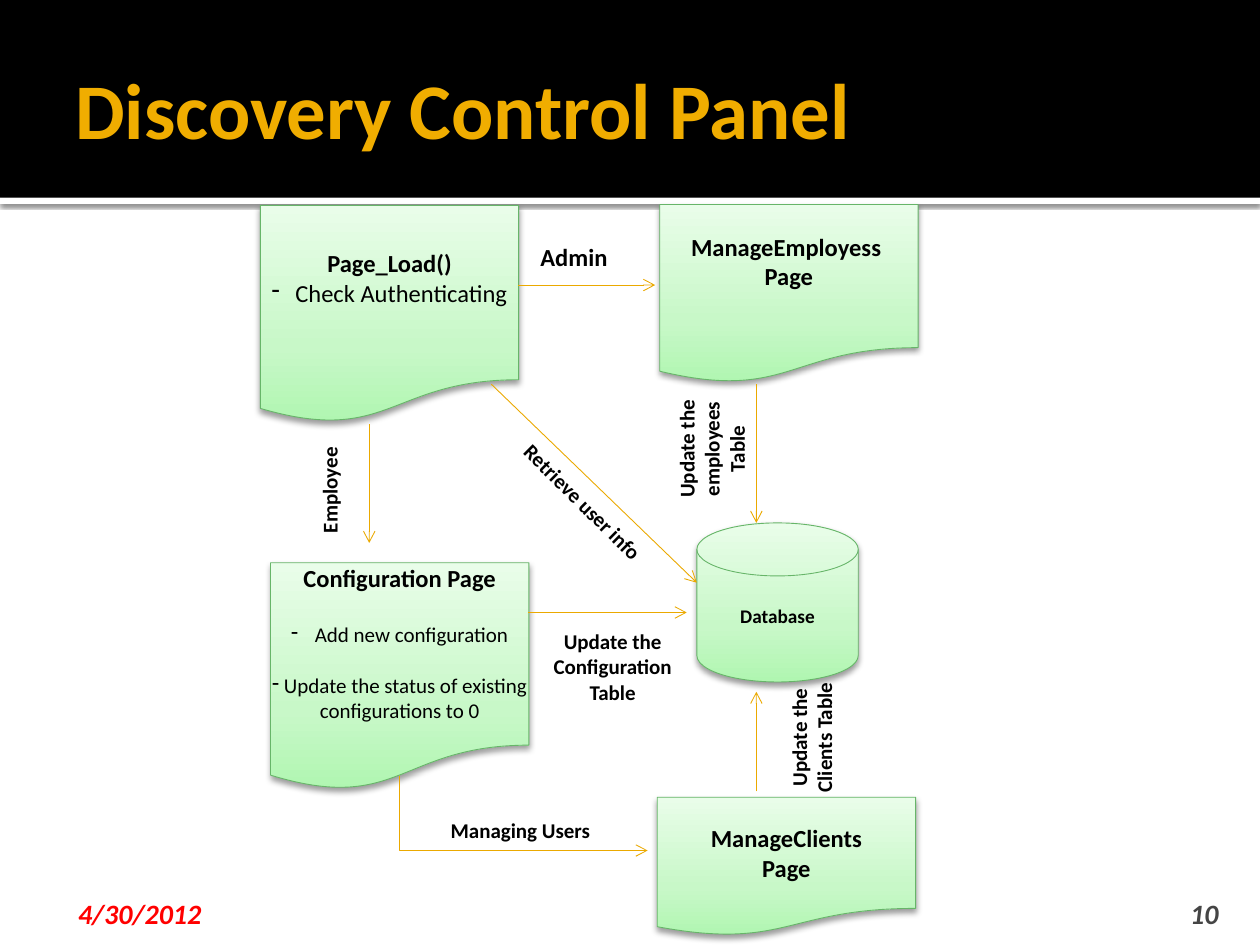
from copy import deepcopy
from dataclasses import dataclass

from lxml import etree
from pptx import Presentation
from pptx import util as u
from pptx.dml.color import RGBColor
from pptx.enum import shapes, text
from pptx.oxml import ns

KIND = shapes.MSO_SHAPE
CENTER, RIGHT = text.PP_ALIGN.CENTER, text.PP_ALIGN.RIGHT
MIDDLE, BOTTOM = text.MSO_ANCHOR.MIDDLE, text.MSO_ANCHOR.BOTTOM
TIGHT = (0, 0, 0, 0)
NORMAL = (7.2, 3.6, 7.2, 3.6)


@dataclass(frozen=True)
class Theme:
    font: str = "Calibri"
    black: str = "000000"
    white: str = "FFFFFF"
    title: str = "F0AD00"
    date: str = "FF0000"
    number: str = "454545"
    arrow: str = "EBA900"
    edge: str = "67B569"
    greens: tuple = ((0, "B0F6B1"), (0.35, "C8F8C8"), (1, "E9FDE9"))
    title_size: float = 45
    footer_size: float = 16
    heading_size: float = 14
    label_size: float = 12
    small_size: float = 11
    hairline: float = 0.5


THEME = Theme()


def rgb(value):
    return RGBColor.from_string(value)


def child(parent, tag, **values):
    return etree.SubElement(parent, ns.qn(tag), {k: str(v) for k, v in values.items()})


def add_shadow(shape, alpha, blur, distance):
    """Cast a black shadow straight down."""
    shape.shadow.inherit = False
    effects = shape._element.spPr.find(ns.qn("a:effectLst"))
    outer = child(effects, "a:outerShdw", blurRad=u.Pt(blur), dist=u.Pt(distance),
                  dir=5400000, algn="ctr", rotWithShape=0)
    color = child(outer, "a:srgbClr", val=THEME.black)
    child(color, "a:alpha", val=alpha * 1000)


def set_frame(shape, insets=NORMAL, anchor=None, wrap=True):
    frame = shape.text_frame
    frame.word_wrap = wrap
    frame.vertical_anchor = anchor
    for side, inset in zip(("left", "top", "right", "bottom"), insets):
        setattr(frame, f"margin_{side}", u.Pt(inset))
    return frame


def add_dash(para, hang):
    """Give the paragraph a dash bullet with a hanging indent."""
    props = para._p.get_or_add_pPr()
    props.set("marL", str(u.Pt(hang)))
    props.set("indent", str(-u.Pt(hang)))
    child(props, "a:buFontTx")
    child(props, "a:buChar", char="-")


def write(frame, lines, align=CENTER):
    """Write (wording, format) pairs, one paragraph each."""
    for index, (wording, changes) in enumerate(lines):
        values = {"size": THEME.heading_size, "bold": True, "italic": False,
                  "color": THEME.black, "gap": 0, "hang": None} | changes
        para = frame.paragraphs[0] if index == 0 else frame.add_paragraph()
        para.alignment = align
        para.space_before = u.Pt(values["gap"])
        if values["hang"] is not None:
            add_dash(para, values["hang"])
        span = para.add_run()
        span.text = wording
        span.font.color.rgb = rgb(values["color"])
        for name, value in {"name": THEME.font, "size": u.Pt(values["size"]),
                            "bold": values["bold"], "italic": values["italic"]}.items():
            setattr(span.font, name, value)


def add_text(page, place, wording, align=CENTER, turn=0, insets=NORMAL, anchor=None,
             wrap=True, **changes):
    box = page.shapes.add_textbox(*map(u.Pt, place))
    box.rotation = turn
    write(set_frame(box, insets, anchor, wrap), [(wording, changes)], align)


def add_band(page, place, color):
    band = page.shapes.add_shape(KIND.RECTANGLE, *map(u.Pt, place))
    band.shadow.inherit = False
    band.fill.solid()
    band.fill.fore_color.rgb = rgb(color)
    band.line.fill.background()
    return band


def add_node(page, kind, place, lines, insets=TIGHT, anchor=MIDDLE):
    node = page.shapes.add_shape(kind, *map(u.Pt, place))
    node.fill.gradient()
    node.fill.gradient_angle = 90
    stop_list = node._element.spPr.find(".//" + ns.qn("a:gsLst"))
    stop_list.append(deepcopy(stop_list[-1]))
    for stop, (position, color) in zip(node.fill.gradient_stops, THEME.greens):
        stop.position = position
        stop.color.rgb = rgb(color)
    node.line.color.rgb = rgb(THEME.edge)
    node.line.width = u.Pt(THEME.hairline)
    add_shadow(node, 38, 3.5, 2)
    write(set_frame(node, insets, anchor), lines)


def add_arrow(page, start, end, kind=shapes.MSO_CONNECTOR.STRAIGHT):
    arrow = page.shapes.add_connector(kind, *map(u.Pt, start + end))
    arrow.line.color.rgb = rgb(THEME.arrow)
    arrow.line.width = u.Pt(THEME.hairline)
    child(arrow.line._ln, "a:tailEnd", type="arrow")
    child(arrow._element.spPr, "a:effectLst")
    return arrow


def add_corner_arrow(page, start, end):
    """Go down from start, then right to end: a flipped elbow turned by 270 degrees."""
    middle_x, middle_y = ((a + b) / 2 for a, b in zip(start, end))
    half_x, half_y = ((b - a) / 2 for a, b in zip(start, end))
    arrow = add_arrow(page, (middle_x + half_y, middle_y - half_x),
                      (middle_x - half_y, middle_y + half_x), shapes.MSO_CONNECTOR.ELBOW)
    props = arrow._element.spPr
    props.find(ns.qn("a:xfrm")).set("rot", str(270 * 60000))
    props.find(ns.qn("a:prstGeom")).set("prst", "bentConnector2")


def add_header_and_footer(page):
    add_shadow(add_band(page, (0, 113, 720, 3.6), THEME.white), 60, 2.5, 0.8)
    add_band(page, (0, 0, 720, 113), THEME.black)
    add_text(page, (36, 12.2, 648, 98.6), "Discovery Control Panel", None, anchor=MIDDLE,
             insets=(7.2, 3.6, 3.6, 3.6), size=THEME.title_size, color=THEME.title)
    footer = {"anchor": BOTTOM, "size": THEME.footer_size, "italic": True}
    add_text(page, (36, 509.8, 168, 21.6), "4/30/2012", None,
             insets=(8.6, 3.6, 3.6, 0), color=THEME.date, **footer)
    add_text(page, (645.8, 509.8, 57.6, 21.6), "10", RIGHT,
             insets=(7.2, 3.6, 7.2, 0), color=THEME.number, **footer)


def add_nodes(page):
    document, width = KIND.FLOWCHART_DOCUMENT, 147.6
    raised = (0, 0, 0, 17)
    detail = {"size": THEME.label_size, "bold": False}
    add_node(page, KIND.FLOWCHART_MAGNETIC_DISK, (398.2, 298.8, 92.2, 90.9),
             [("Database", {"size": THEME.small_size})], NORMAL)
    add_node(page, document, (148.8, 117.4, width, 124.2),
             [("Page_Load()", {}), ("Check Authenticating", {"bold": False, "hang": 13.5})],
             raised)
    add_node(page, document, (377, 116.9, width, 102),
             [("ManageEmployess ", {}), ("Page", {})], raised)
    add_node(page, document, (375.6, 455.6, width, 79.2),
             [("ManageClients", {}), ("Page", {})], NORMAL)
    add_node(page, document, (154.6, 321.6, width, 130),
             [("Configuration Page", {}),
              ("Add new configuration", detail | {"gap": 17, "hang": 13.5}),
              (" Update the status of existing configurations to 0",
               detail | {"gap": 14.6, "hang": 0})], anchor=None)


def add_links(page):
    for start, end in (((296, 162.9), (374.4, 162.9)), ((280.8, 219.6), (398.2, 333)),
                       ((432.2, 219.6), (432.2, 298.8)), ((211, 242.4), (211, 310.3)),
                       ((302, 350), (392.4, 350)), ((432.2, 452.2), (432.2, 395.3))):
        add_arrow(page, start, end)
    add_corner_arrow(page, (228.2, 443.5), (370.1, 486))

    add_text(page, (301.7, 134.8, 79.2, 24.2), "Admin", None)
    for place, wording, turn, wrap in (
            ((358.6, 231, 96.5, 51), "Update the employees Table", 270, True),
            ((154.8, 269.2, 67, 21.8), "Employee", 270, False),
            ((247, 275, 170, 21.8), " Retrieve user info", 44.6, True),
            ((301.9, 355.7, 96.5, 51), "Update the Configuration Table", 0, True),
            ((248.4, 463.8, 98, 21.8), "Managing Users", 0, False),
            ((415.6, 403.2, 96.5, 36.4), "Update the Clients Table", 270, True)):
        add_text(page, place, wording, turn=turn, wrap=wrap, size=THEME.label_size)


def main():
    deck = Presentation()
    deck.slide_width, deck.slide_height = u.Pt(720), u.Pt(540)
    page = deck.slides.add_slide(deck.slide_layouts[6])
    add_header_and_footer(page)
    add_nodes(page)
    add_links(page)
    deck.save("out.pptx")


if __name__ == "__main__":
    main()
